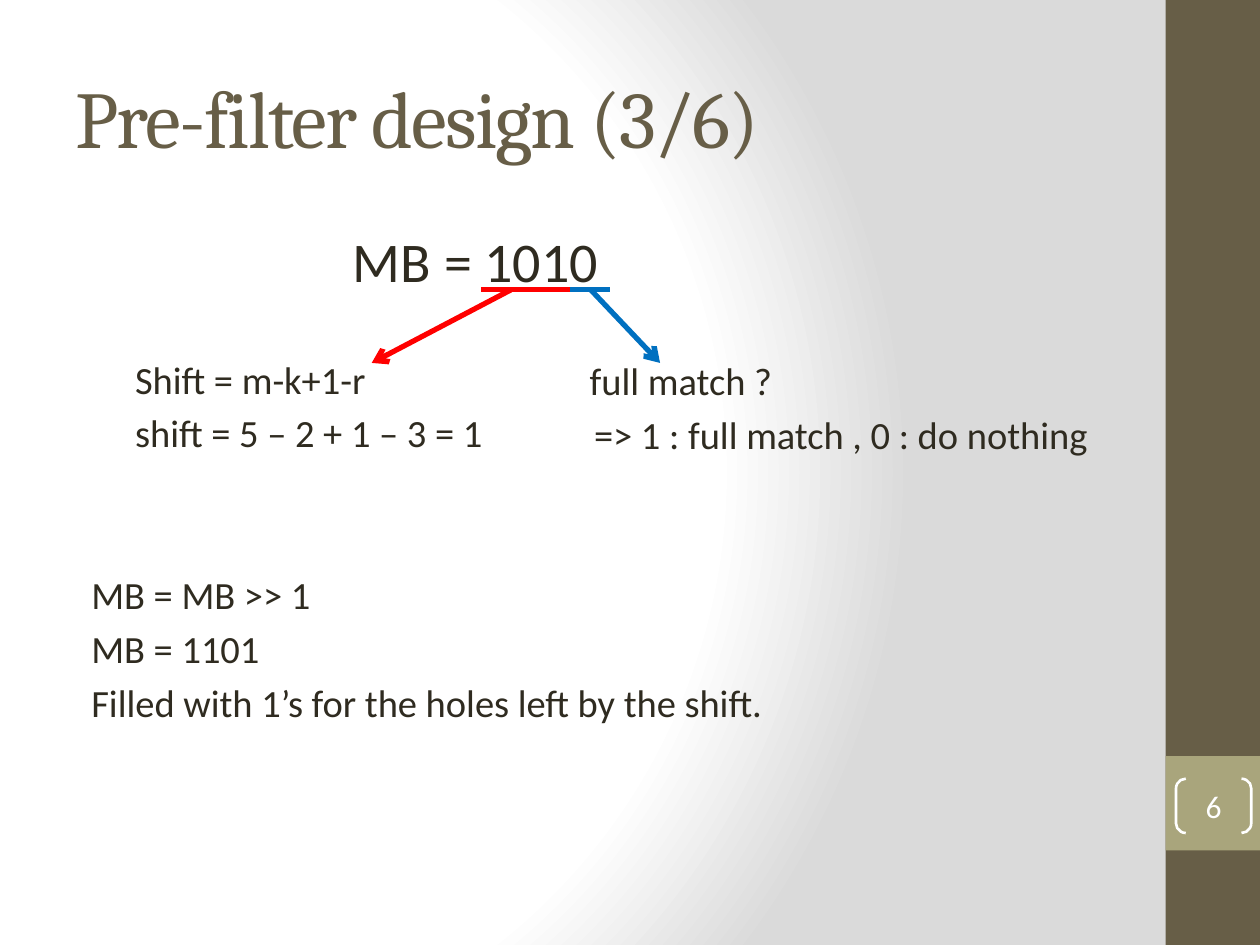
from lxml.etree import SubElement
from pptx import Presentation
from pptx.dml.color import RGBColor
from pptx.enum.shapes import MSO_CONNECTOR, MSO_SHAPE
from pptx.enum.text import MSO_ANCHOR, MSO_AUTO_SIZE, PP_ALIGN
from pptx.oxml import parse_xml
from pptx.oxml.ns import nsdecls, qn
from pptx.util import Pt

COLORS = {
    "brown": "675E47", "olive": "A9A57C", "ink": "2F2B20", "white": "FFFFFF",
    "gray": "DADADA", "red": "FF0000", "blue": "0070C0",
}


def rgb(name):
    """Return the named palette colour."""
    return RGBColor.from_string(COLORS[name])


def place(shape, box):
    """Move a shape to a left, top, width, height box in points."""
    shape.left, shape.top, shape.width, shape.height = (Pt(value) for value in box)


def write(para, text, size=22, font="Calibri", color="ink", tracking=None):
    """Add one formatted span to a paragraph."""
    span = para.add_run()
    span.text = text
    span.font.size = Pt(size)
    span.font.name = font
    span.font.color.rgb = rgb(color)
    if tracking is not None:
        span._r.get_or_add_rPr().set("spc", str(tracking * 100))


def write_lines(frame, lines):
    """Write (text, size, indent, space before) lines without bullets."""
    for index, (text, size, indent, gap) in enumerate(lines):
        para = frame.paragraphs[0] if index == 0 else frame.add_paragraph()
        para.space_before = Pt(gap)
        properties = para._p.get_or_add_pPr()
        properties.set("marL", str(Pt(indent)))
        properties.set("indent", "0")
        SubElement(properties, qn("a:buNone"))
        write(para, text, size=size)


def add_background(page):
    """Fill the page with a circular gradient."""
    stops = "".join(
        f'<a:gs pos="{position * 1000}"><a:srgbClr val="{COLORS[name]}"/></a:gs>'
        for position, name in ((0, "white"), (75, "white"), (100, "gray")))
    fill = page.background.fill
    fill.solid()
    properties = page._element.cSld.find(qn("p:bg")).find(qn("p:bgPr"))
    properties.replace(properties[0], parse_xml(
        f'<a:gradFill {nsdecls("a")} rotWithShape="1"><a:gsLst>{stops}</a:gsLst>'
        '<a:path path="circle"><a:fillToRect l="20000" t="50000" r="100000" b="50000"/>'
        '</a:path></a:gradFill>'))


def add_block(page, box, color):
    """Add a plain filled rectangle."""
    block = page.shapes.add_shape(MSO_SHAPE.RECTANGLE, *(Pt(value) for value in box))
    block.shadow.inherit = False
    block.fill.solid()
    block.fill.fore_color.rgb = rgb(color)
    block.line.fill.background()


def add_sidebar(page, box, number):
    """Add the side band with its bracketed page number."""
    left, top, width, height = box
    add_block(page, box, "brown")
    add_block(page, (left, top + height * 0.8, width, width), "olive")
    bracket = page.shapes.add_shape(
        MSO_SHAPE.DOUBLE_BRACKET, Pt(left + 6), Pt(top + height * 0.8 + 13), Pt(43), Pt(31))
    bracket.shadow.inherit = False
    bracket.adjustments[0] = 0.18
    bracket.fill.background()
    bracket.line.color.rgb = rgb("white")
    bracket.line.width = Pt(1.5)
    frame = bracket.text_frame
    frame.margin_left = frame.margin_right = frame.margin_top = frame.margin_bottom = 0
    frame.vertical_anchor = MSO_ANCHOR.MIDDLE
    para = frame.paragraphs[0]
    para.alignment = PP_ALIGN.CENTER
    write(para, number, size=18, color="white")


def add_title(page, box, text):
    """Fill the title placeholder."""
    title = page.shapes.title
    place(title, box)
    frame = title.text_frame
    frame.auto_size = MSO_AUTO_SIZE.NONE
    frame.vertical_anchor = MSO_ANCHOR.MIDDLE
    para = frame.paragraphs[0]
    para.alignment = PP_ALIGN.LEFT
    write(para, text, size=46, font="Cambria", color="brown", tracking=-1)


def add_body(page, box, lines):
    """Fill the body placeholder with lines."""
    body = page.placeholders[1]
    place(body, box)
    body.text_frame.auto_size = MSO_AUTO_SIZE.NONE
    write_lines(body.text_frame, lines)


def add_match_notes(page, box, lines):
    """Add the right-hand column that explains the last bit."""
    notes = page.shapes.add_textbox(*(Pt(value) for value in box))
    frame = notes.text_frame
    frame.word_wrap = True
    frame.margin_left = frame.margin_right = frame.margin_top = frame.margin_bottom = 0
    write_lines(frame, lines)


def add_line(page, start, end, color, arrow=False):
    """Add a straight line, with an arrowhead at its end if asked."""
    line = page.shapes.add_connector(
        MSO_CONNECTOR.STRAIGHT, *(Pt(value) for value in (*start, *end)))
    line.line.color.rgb = rgb(color)
    line.line.width = Pt(3)
    if arrow:
        SubElement(line.line._get_or_add_ln(), qn("a:tailEnd"), type="arrow")
    SubElement(line._element.spPr, qn("a:effectLst"))


def add_bit_marks(page, box):
    """Underline the two bit groups and point to their meanings."""
    left, top, width, height = box
    split = left + 51
    bottom = top + height
    add_line(page, (left, top), (split, top), "red")
    add_line(page, (split, top), (left + width, top), "blue")
    add_line(page, (left + 17, top), (left - 62.6, bottom), "red", arrow=True)
    add_line(page, (left + 62.6, top), (left + 102.2, bottom), "blue", arrow=True)


def main():
    """Build and save the deck."""
    deck = Presentation()
    deck.slide_width, deck.slide_height = Pt(720), Pt(540)
    page = deck.slides.add_slide(deck.slide_layouts[1])
    add_background(page)
    add_sidebar(page, (666, 0, 54, 540), "6")
    add_title(page, (36, 21.6, 600, 90), "Pre-filter design (3/6)")
    add_body(page, (36, 126, 600, 378), [
        ("MB = 1010", 32, 158.5, 4),
        ("Shift = m-k+1-r", 22, 34, 35.5),
        ("shift = 5 – 2 + 1 – 3 = 1", 22, 34, 4),
        ("MB = MB >> 1", 22, 9, 66),
        ("MB = 1101", 22, 9, 4.5),
        ("Filled with 1’s for the holes left by the shift.", 22, 9, 4.5),
    ])
    add_match_notes(page, (337, 204.2, 299, 60), [
        ("full match ?", 22, 0, 0),
        ("=> 1 : full match , 0 : do nothing", 22, 2.5, 4),
    ])
    add_bit_marks(page, (275, 165.6, 73.5, 41.8))
    deck.save("out.pptx")


if __name__ == "__main__":
    main()
